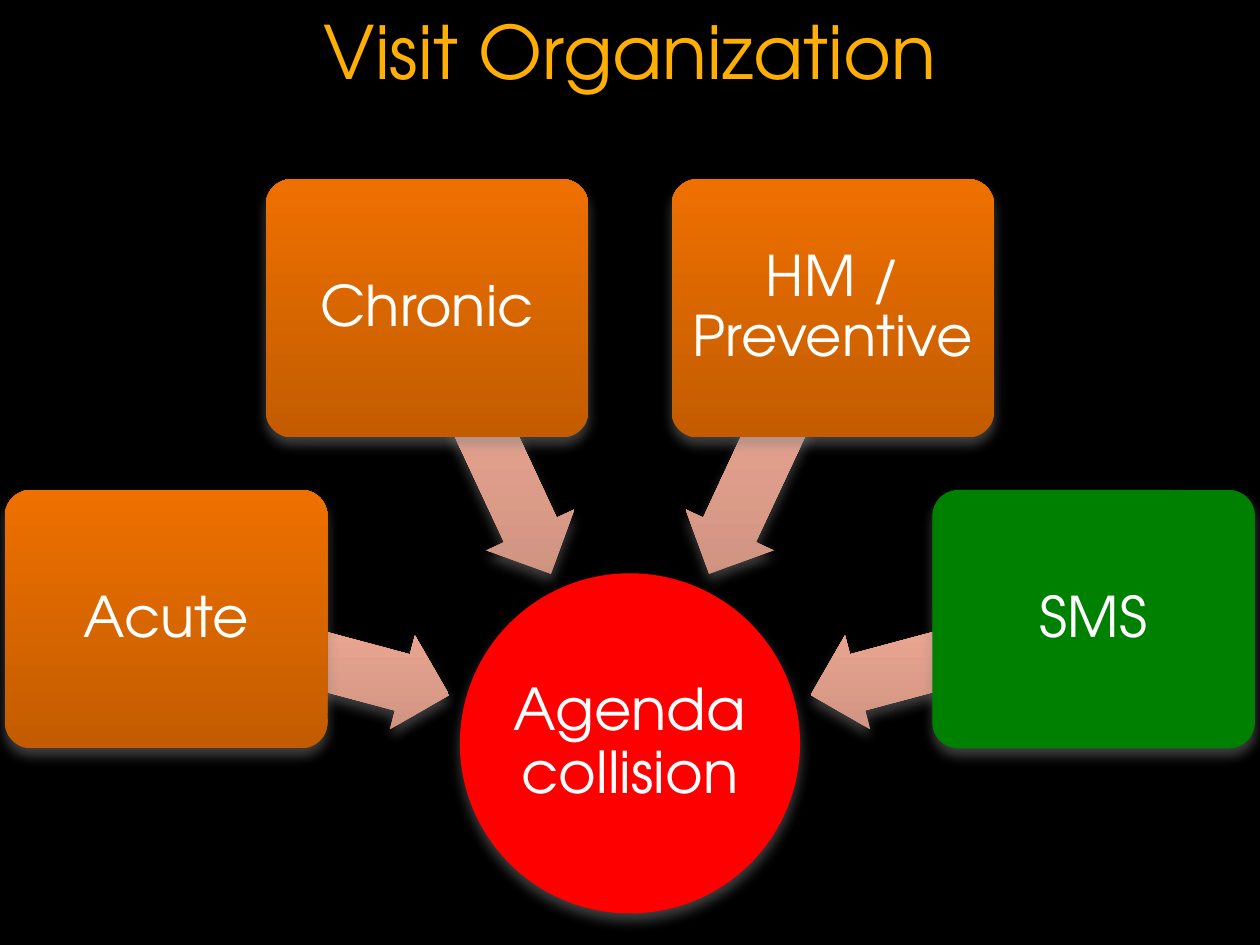
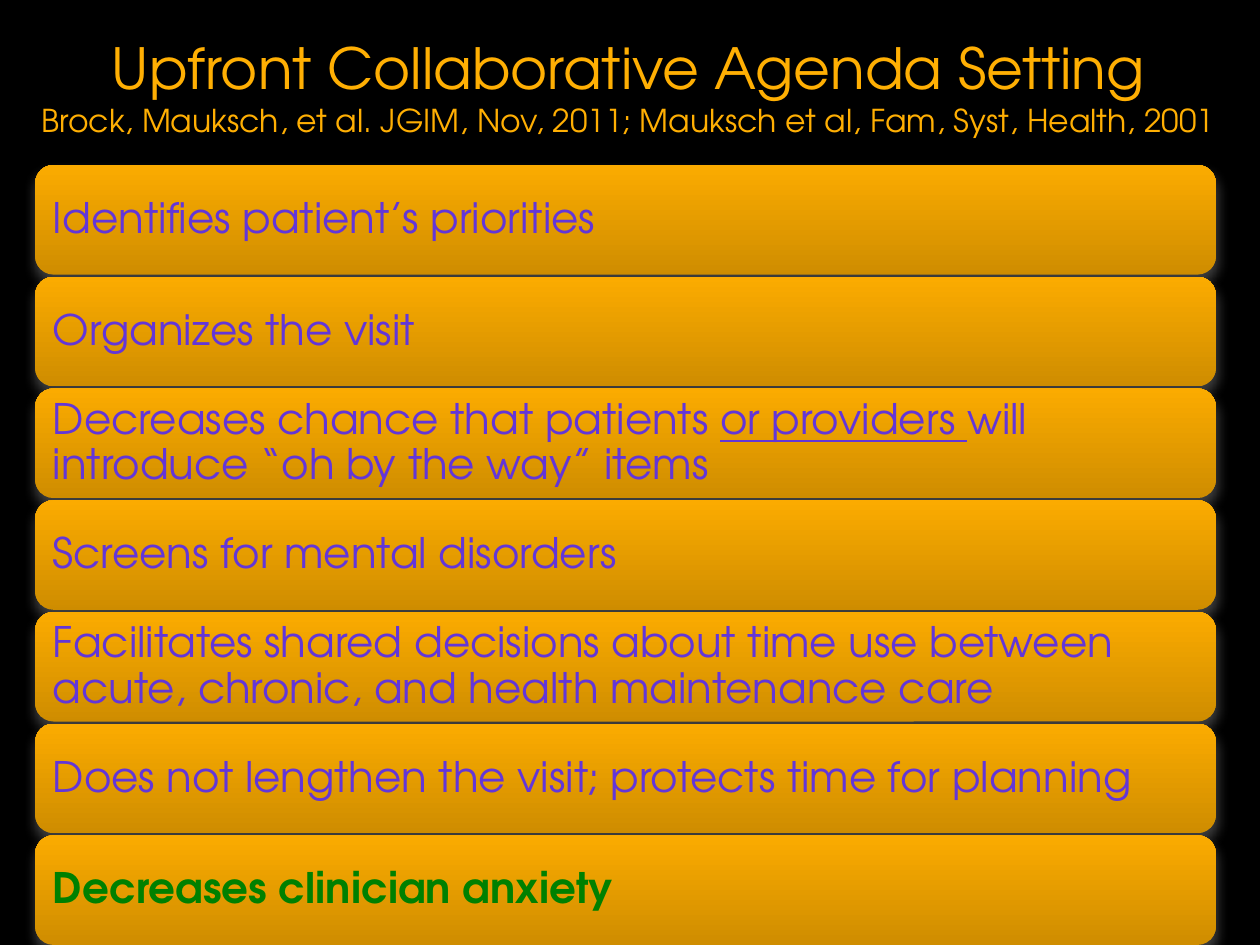
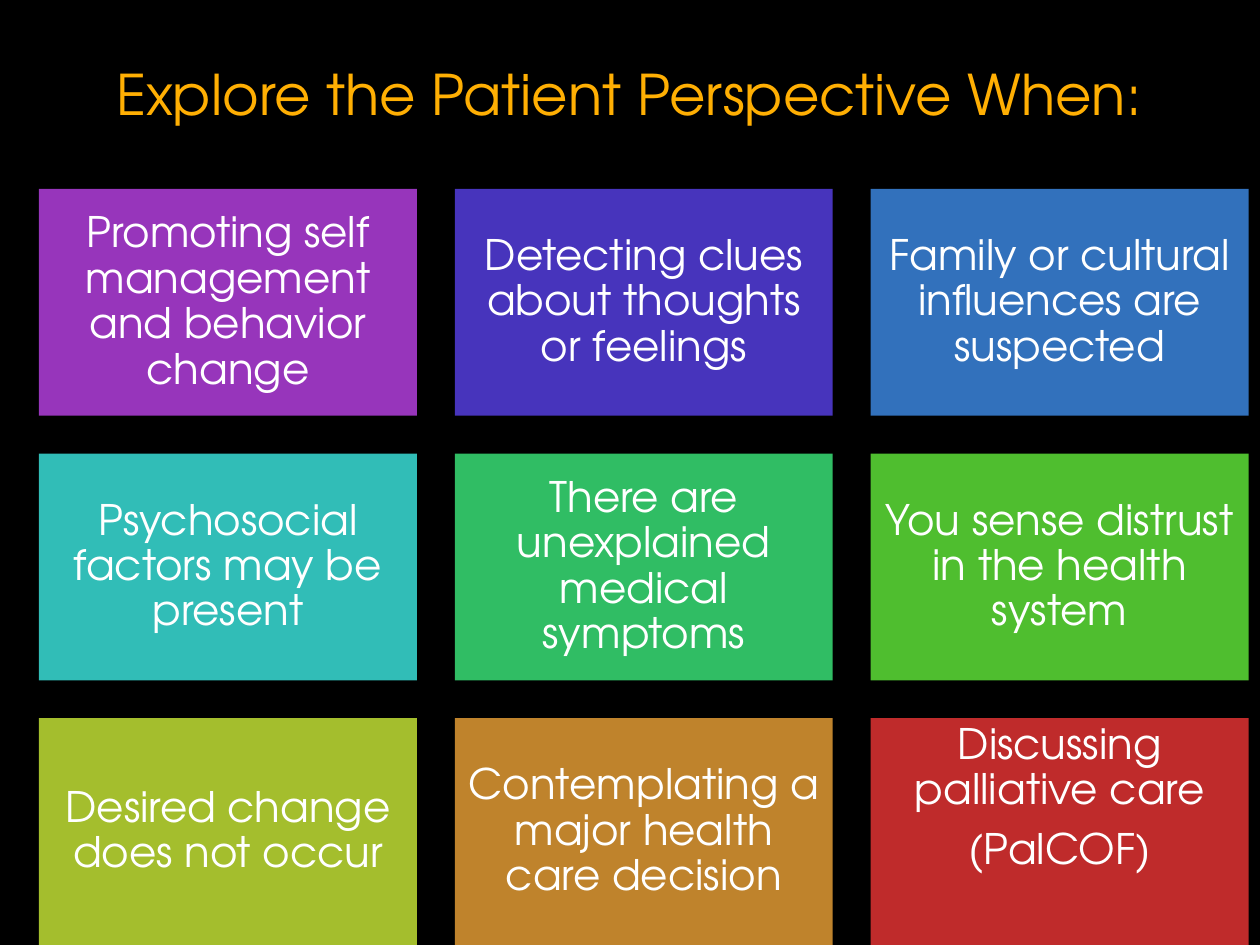
from math import cos, radians, sin

from lxml import etree
from pptx import Presentation
from pptx.dml.color import RGBColor
from pptx.enum.shapes import MSO_SHAPE as SHAPE
from pptx.enum.text import MSO_ANCHOR as ANCHOR, PP_ALIGN as ALIGN
from pptx.oxml.ns import qn
from pptx.util import Inches, Pt

FONT = "TeX Gyre Adventor"
COLORS = {
    "background": "000000", "title": "FFAF03", "white": "FFFFFF",
    "hub": "FF0000", "green": "008000", "benefit": "6336D8", "shadow": "808080",
    "purple": "9735BB", "indigo": "4734BC", "blue": "3271BC",
    "teal": "31BDB7", "emerald": "30BD64", "lime": "4FBE2F",
    "olive": "A4BE2D", "ochre": "BF832C", "red": "BF2B2B",
}
# bottom colour, top colour
GRADIENTS = {
    "arrow": ("CD9280", "FAB09A"),
    "topic": ("C35C00", "EE7000"),
    "bar": ("CF8D00", "FBAB00"),
}

# Text is a list of paragraphs; a paragraph is a list of (words, format) runs.
VISIT_TITLE = [[("Visit Organization", {"size": 42})]]
VISIT_HUB = "Agenda collision"
VISIT_TOPICS = [("Acute", "topic"), ("Chronic", "topic"),
                ("HM / Preventive", "topic"), ("SMS", "green")]

AGENDA_TITLE = [
    [("Upfront Collaborative Agenda Setting", {"size": 32.4})],
    [("Brock, Mauksch, et al. JGIM, Nov, 2011; Mauksch et al, Fam, Syst, Health, 2001",
      {"size": 18})],
]
AGENDA_BENEFITS = [
    "Identifies patient’s priorities",
    "Organizes the visit",
    [[("Decreases chance that patients ", {}), ("or providers ", {"underline": True}),
      ("will introduce “oh by the way” items", {})]],
    "Screens for mental disorders",
    "Facilitates shared decisions about time use between acute, chronic, "
    "and health maintenance care",
    "Does not lengthen the visit; protects time for planning",
    [[("Decreases clinician anxiety", {"color": "green", "bold": True})]],
]

PERSPECTIVE_TITLE = [[("Explore the Patient Perspective When:", {"size": 32})]]
PERSPECTIVE_CUES = [
    ("Promoting self management and behavior change", "purple"),
    ("Detecting clues about thoughts or feelings", "indigo"),
    ("Family or cultural influences are suspected", "blue"),
    ("Psychosocial factors may be present", "teal"),
    ("There are unexplained medical symptoms", "emerald"),
    ("You sense distrust in the health system", "lime"),
    ("Desired change does not occur", "olive"),
    ("Contemplating a major health care decision", "ochre"),
    ([[("Discussing palliative care", {})], [("(PalCOF)", {})]], "red"),
]


def write(shape, text, *, size=24, color="white", align=ALIGN.CENTER, anchor=ANCHOR.MIDDLE,
          inset=0.1, top=None, line=0.9, after=0.35):
    """Fill a shape with text; after is the paragraph gap as a share of the size."""
    frame = shape.text_frame
    frame.word_wrap = True
    frame.vertical_anchor = anchor
    frame.margin_left = frame.margin_right = frame.margin_bottom = Inches(inset)
    frame.margin_top = Inches(inset if top is None else top)
    paragraphs = [[(text, {})]] if isinstance(text, str) else text
    for index, runs in enumerate(paragraphs):
        paragraph = frame.add_paragraph() if index else frame.paragraphs[0]
        paragraph.alignment = align
        paragraph.line_spacing = line
        paragraph.space_after = Pt(size * after)
        for words, style in runs:
            run = paragraph.add_run()
            run.text = words
            font = run.font
            font.name = FONT
            font.size = Pt(style.get("size", size))
            font.color.rgb = RGBColor.from_string(COLORS[style.get("color", color)])
            font.bold = style.get("bold")
            font.underline = style.get("underline")


def add_title(slide, text, left, top, width, height):
    box = slide.shapes.add_textbox(*map(Inches, (left, top, width, height)))
    write(box, text, color="title", anchor=ANCHOR.TOP, top=0.05, line=1.0, after=0)


def add_soft_shadow(shape):
    effects = shape._element.spPr.find(qn("a:effectLst"))
    outer = etree.SubElement(effects, qn("a:outerShdw"), blurRad=str(Pt(7)), dist=str(Pt(4)),
                             dir="5400000", rotWithShape="0")
    tint = etree.SubElement(outer, qn("a:srgbClr"), val=COLORS["shadow"])
    etree.SubElement(tint, qn("a:alpha"), val="50000")


def add_block(slide, kind, left, top, width, height, fill, shadow=True):
    """Add a borderless shape whose fill names a colour or a gradient."""
    shape = slide.shapes.add_shape(kind, *map(Inches, (left, top, width, height)))
    shape.line.fill.background()
    shape.shadow.inherit = False
    if fill in GRADIENTS:
        shape.fill.gradient()
        shape.fill.gradient_angle = 90
        for stop, color in zip(shape.fill.gradient_stops, GRADIENTS[fill]):
            stop.color.rgb = RGBColor.from_string(color)
        shape._element.spPr.find(qn("a:gradFill")).set("rotWithShape", "0")
    else:
        shape.fill.solid()
        shape.fill.fore_color.rgb = RGBColor.from_string(COLORS[fill])
    if shadow:
        add_soft_shadow(shape)
    return shape


def build_visit(slide):
    add_title(slide, VISIT_TITLE, 0.5, 0, 9, 1.25)
    hub_x, hub_y, hub_size = 5, 5.9, 2.7
    arrow_width, arrow_height, arrow_radius = 2.33, 0.77, 2.65
    topic_width, topic_height, topic_radius = 2.56, 2.05, 3.81
    first_angle, angle_step = 195, 50

    def add_around_hub(kind, angle, radius, width, height, fill):
        center_x = hub_x + radius * cos(radians(angle))
        center_y = hub_y + radius * sin(radians(angle))
        return add_block(slide, kind, center_x - width / 2, center_y - height / 2,
                         width, height, fill)

    hub = add_around_hub(SHAPE.OVAL, 0, 0, hub_size, hub_size, "hub")
    write(hub, VISIT_HUB, size=33, inset=0.02)
    for index, (name, fill) in enumerate(VISIT_TOPICS):
        angle = first_angle + index * angle_step
        arrow = add_around_hub(SHAPE.LEFT_ARROW, angle, arrow_radius,
                               arrow_width, arrow_height, "arrow")
        arrow.rotation = angle
        arrow.adjustments[0] = 0.6
        topic = add_around_hub(SHAPE.ROUNDED_RECTANGLE, angle, topic_radius,
                               topic_width, topic_height, fill)
        topic.adjustments[0] = 0.1
        write(topic, name, size=32, inset=0.07)


def build_agenda(slide):
    add_title(slide, AGENDA_TITLE, 0.14, 0.21, 9.69, 0.86)
    first_top, height, slide_bottom = 1.31, 0.87, 7.5
    step = (slide_bottom - height - first_top) / (len(AGENDA_BENEFITS) - 1)
    for row, benefit in enumerate(AGENDA_BENEFITS):
        bar = add_block(slide, SHAPE.ROUNDED_RECTANGLE, 0.28, first_top + row * step,
                        9.37, height, "bar")
        write(bar, benefit, color="benefit", align=ALIGN.LEFT)


def build_perspective(slide):
    add_title(slide, PERSPECTIVE_TITLE, 0.33, 0.42, 9.33, 0.86)
    left, top, width, height, gap, columns = 0.31, 1.5, 3, 1.8, 0.3, 3
    for index, (cue, fill) in enumerate(PERSPECTIVE_CUES):
        row, column = divmod(index, columns)
        tile = add_block(slide, SHAPE.RECTANGLE, left + column * (width + gap),
                         top + row * (height + gap), width, height, fill, shadow=False)
        if isinstance(cue, str):
            write(tile, cue)
        else:
            write(tile, cue, anchor=ANCHOR.TOP, top=0.04)


def main():
    prs = Presentation()
    prs.slide_width, prs.slide_height = Inches(10), Inches(7.5)
    backdrop = prs.slide_master.background.fill
    backdrop.solid()
    backdrop.fore_color.rgb = RGBColor.from_string(COLORS["background"])
    blank = prs.slide_layouts[6]
    for build in (build_visit, build_agenda, build_perspective):
        build(prs.slides.add_slide(blank))
    prs.save("out.pptx")


if __name__ == "__main__":
    main()
